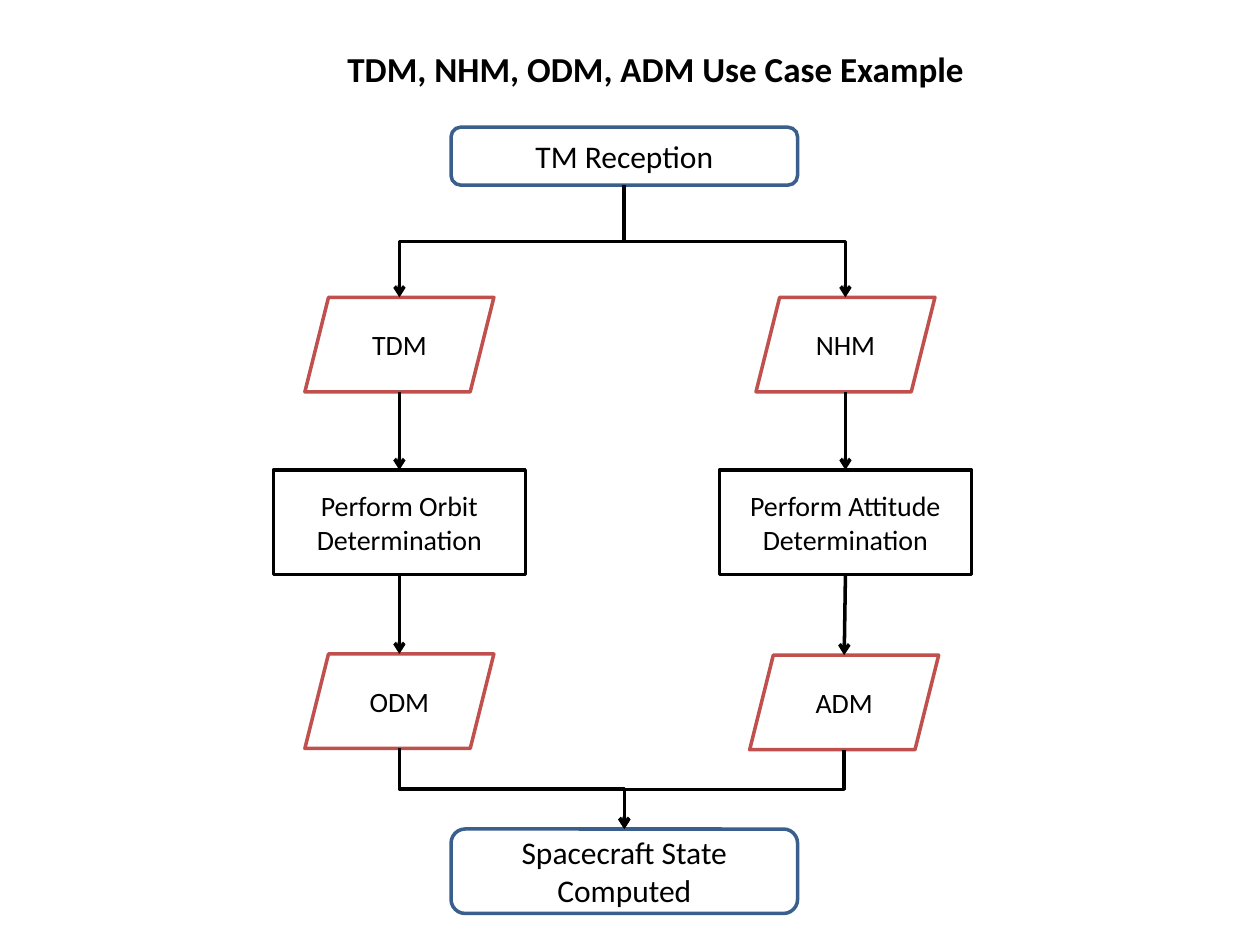
"""Build a flowchart slide of the TDM, NHM, ODM and ADM use case."""
from typing import NamedTuple, Optional

import pptx
import pptx.dml.color
import pptx.enum.shapes
import pptx.enum.text
import pptx.oxml.ns
import pptx.oxml.xmlchemy
import pptx.util
from lxml import etree

Inches = pptx.util.Inches
Kind = pptx.enum.shapes.MSO_SHAPE
Link = pptx.enum.shapes.MSO_CONNECTOR
RGB = pptx.dml.color.RGBColor
qn = pptx.oxml.ns.qn

BLACK = RGB(0x00, 0x00, 0x00)
WHITE = RGB(0xFF, 0xFF, 0xFF)
RED = RGB(0xC0, 0x50, 0x4D)
BLUE = RGB(0x3A, 0x5F, 0x8C)
TOP, BOTTOM = 0, 2


class Style(NamedTuple):
    kind: int
    line: RGB
    size: int
    fill: Optional[RGB] = None


class Node(NamedTuple):
    text: str
    style: Style
    left: float
    top: float
    width: float
    height: float

    @property
    def mid(self) -> float:
        return self.left + self.width / 2

    @property
    def base(self) -> float:
        return self.top + self.height


STATE = Style(Kind.ROUNDED_RECTANGLE, BLUE, 18, WHITE)
DATA = Style(Kind.PARALLELOGRAM, RED, 16)
TASK = Style(Kind.RECTANGLE, BLACK, 16)

START = Node("TM Reception", STATE, 3.58, 1.01, 2.75, 0.46)
END = Node("Spacecraft State Computed", STATE, 3.58, 6.58, 2.75, 0.67)
LANES = (
    (
        Node("TDM", DATA, 2.42, 2.36, 1.5, 0.75),
        Node("Perform Orbit Determination", TASK, 2.17, 3.73, 2, 0.83),
        Node("ODM", DATA, 2.42, 5.19, 1.5, 0.75),
    ),
    (
        Node("NHM", DATA, 6, 2.36, 1.42, 0.75),
        Node("Perform Attitude Determination", TASK, 5.71, 3.73, 2, 0.83),
        Node("ADM", DATA, 5.95, 5.2, 1.5, 0.75),
    ),
)


def write(frame, text: str, size: int, bold: bool = False) -> None:
    """Put one centred paragraph in a text frame."""
    frame.word_wrap = True
    para = frame.paragraphs[0]
    para.text = text
    para.alignment = pptx.enum.text.PP_ALIGN.CENTER
    para.font.name = "Calibri"
    para.font.size = pptx.util.Pt(size)
    para.font.bold = bold
    para.font.color.rgb = BLACK


def draw(shapes, node: Node):
    """Add the shape of one node."""
    box = (node.left, node.top, node.width, node.height)
    shape = shapes.add_shape(node.style.kind, *map(Inches, box))
    shape.shadow.inherit = False
    if node.style.fill is None:
        shape.fill.background()
    else:
        shape.fill.solid()
        shape.fill.fore_color.rgb = node.style.fill
    shape.line.color.rgb = node.style.line
    shape.line.width = pptx.util.Pt(2)
    shape.text_frame.vertical_anchor = pptx.enum.text.MSO_ANCHOR.MIDDLE
    write(shape.text_frame, node.text, node.style.size)
    return shape


def arrow(shapes, kind: int, *ends: float):
    """Add a black connector with an arrowhead at its end."""
    link = shapes.add_connector(kind, *map(Inches, ends))
    link.line.color.rgb = BLACK
    link.line.width = pptx.util.Pt(2)
    props = link._element.spPr
    etree.SubElement(props.find(qn("a:ln")), qn("a:tailEnd"), type="arrow")
    etree.SubElement(props, qn("a:effectLst"))
    return link


def bend(shapes, head: Node, foot: Node) -> None:
    """Add an elbow arrow that runs down, across and down."""
    run, drop = foot.mid - head.mid, foot.top - head.base
    mid_x, mid_y = head.mid + run / 2, head.base + drop / 2
    half_x, half_y = drop / 2, abs(run) / 2
    link = arrow(shapes, Link.ELBOW, mid_x - half_x, mid_y - half_y,
                 mid_x + half_x, mid_y + half_y)
    frame = link._element.spPr.find(qn("a:xfrm"))
    frame.set("rot", str((270 if run > 0 else 90) * 60000))
    if run > 0:
        frame.set("flipH", "1")


def lane(shapes, data: Node, task: Node, result: Node) -> None:
    """Add one column of nodes and its arrows."""
    draw(shapes, data)
    box = draw(shapes, task)
    draw(shapes, result)
    entry = arrow(shapes, Link.STRAIGHT, data.mid, data.base, task.mid, task.top)
    entry.end_connect(box, TOP)
    leave = arrow(shapes, Link.STRAIGHT, task.mid, task.base, result.mid, result.top)
    leave.begin_connect(box, BOTTOM)
    bend(shapes, START, data)
    bend(shapes, result, END)


def main() -> None:
    """Build and save the slide."""
    deck = pptx.Presentation()
    deck.slide_width, deck.slide_height = Inches(10), Inches(7.5)
    shapes = deck.slides.add_slide(deck.slide_layouts[6]).shapes
    title = shapes.add_textbox(*map(Inches, (2.33, 0.33, 5.75, 0.44)))
    write(title.text_frame, "TDM, NHM, ODM, ADM Use Case Example", 20, True)
    draw(shapes, START)
    draw(shapes, END)
    for nodes in LANES:
        lane(shapes, *nodes)
    deck.save("out.pptx")


if __name__ == "__main__":
    main()
